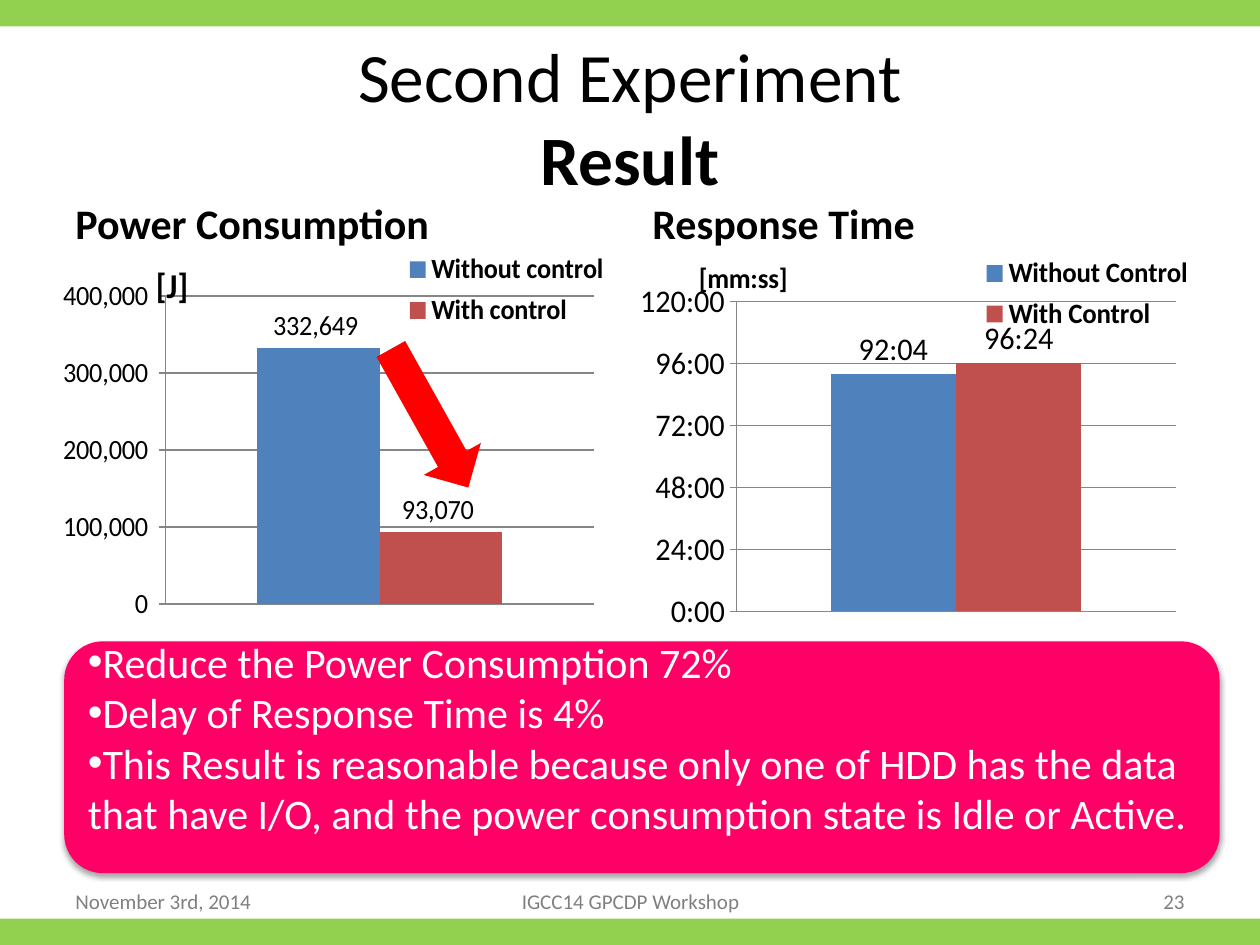
"""Builds the result slide of the second experiment."""
from lxml import etree
from pptx import Presentation
from pptx.chart.data import CategoryChartData
from pptx.dml.color import RGBColor
from pptx.enum.chart import XL_CHART_TYPE, XL_LABEL_POSITION, XL_LEGEND_POSITION, XL_TICK_MARK
from pptx.enum.shapes import MSO_SHAPE
from pptx.enum.text import MSO_ANCHOR, PP_ALIGN
from pptx.oxml import parse_xml
from pptx.oxml.ns import nsdecls, qn
from pptx.util import Inches, Pt

COLUMN = XL_CHART_TYPE.COLUMN_CLUSTERED
ABOVE = XL_LABEL_POSITION.OUTSIDE_END
SIDE = XL_LEGEND_POSITION.RIGHT
CROSS = XL_TICK_MARK.CROSS
RECT, ROUND, ARROW = MSO_SHAPE.RECTANGLE, MSO_SHAPE.ROUNDED_RECTANGLE, MSO_SHAPE.DOWN_ARROW
MIDDLE, BOTTOM = MSO_ANCHOR.MIDDLE, MSO_ANCHOR.BOTTOM
LEFT, CENTER, RIGHT = PP_ALIGN.LEFT, PP_ALIGN.CENTER, PP_ALIGN.RIGHT
GREEN, PINK, RED, GRAY, BLACK, WHITE = "92D050", "FF0066", "FF0000", "808080", "000000", "FFFFFF"
GRID, BARS = "868686", ("4F81BD", "C0504D")


def color(code):
    return RGBColor.from_string(code)


def place(parent, spot, inner=False):
    for old in parent.findall(qn("c:layout")):
        parent.remove(old)
    keys = ("x", "y", "w", "h")[:len(spot)]
    parts = '<c:layoutTarget val="inner"/>' if inner else ""
    parts += "".join(f'<c:{key}Mode val="edge"/>' for key in keys[:2])
    parts += "".join(f'<c:{key} val="{val}"/>' for key, val in zip(keys, spot))
    layout = parse_xml(f'<c:layout {nsdecls("c")}><c:manualLayout>{parts}</c:manualLayout></c:layout>')
    if inner:
        parent.insert(0, layout)
    else:
        parent.find(qn("c:overlay")).addprevious(layout)


class Deck:
    """Holds the style and the current slide."""

    def __init__(self, face):
        self.face = face
        self.show = Presentation()
        self.show.slide_width, self.show.slide_height = Inches(10), Inches(7.5)
        self.slide = self.show.slides.add_slide(self.show.slide_layouts[6])

    def font(self, font, size, code=BLACK, bold=False):
        font.name, font.size, font.bold = self.face, Pt(size), bold
        font.color.rgb = color(code)

    def text(self, box, words, size, code=BLACK, bold=False, align=LEFT, anchor=MIDDLE):
        area = self.slide.shapes.add_textbox(*map(Inches, box))
        frame = area.text_frame
        frame.word_wrap, frame.vertical_anchor = True, anchor
        para = frame.paragraphs[0]
        para.text, para.alignment = words, align
        self.font(para.font, size, code, bold)
        return para

    def shape(self, kind, box, code, turn=0):
        item = self.slide.shapes.add_shape(kind, *map(Inches, box))
        item.shadow.inherit = False
        item.fill.solid()
        item.fill.fore_color.rgb = color(code)
        item.line.fill.background()
        item.rotation = turn
        return item

    def panel(self, box, code, lines, size):
        item = self.shape(ROUND, box, code)
        glow = item.element.spPr.find(qn("a:effectLst"))
        glow.append(parse_xml(
            f'<a:outerShdw {nsdecls("a")} blurRad="{Pt(3.1)}" dist="{Pt(1.8)}" dir="5400000" '
            'rotWithShape="0"><a:srgbClr val="000000"><a:alpha val="35000"/></a:srgbClr></a:outerShdw>'))
        frame = item.text_frame
        frame.word_wrap, frame.vertical_anchor = True, MIDDLE
        frame.margin_bottom = Inches(0.37)
        for num, line in enumerate(lines):
            para = frame.add_paragraph() if num else frame.paragraphs[0]
            para.text, para.alignment = line, LEFT
            props = para._p.get_or_add_pPr()
            etree.SubElement(props, qn("a:buFont")).set("typeface", "Arial")
            etree.SubElement(props, qn("a:buChar")).set("char", "•")
            self.font(para.font, size, WHITE)

    def chart(self, box, bars, top, step, form, size, unit, big, plot, key, mark):
        data = CategoryChartData(number_format=form)
        data.categories = ["1"]
        for name, val in bars:
            data.add_series(name, [val])
        chart = self.slide.shapes.add_chart(COLUMN, *map(Inches, box), data).chart
        self.font(chart.font, 10)
        chart.has_title = False
        chart.category_axis.visible = False

        axis = chart.value_axis
        axis.minimum_scale, axis.maximum_scale, axis.major_unit = 0, top, step
        axis.major_tick_mark = CROSS
        axis.tick_labels.number_format = form
        axis.tick_labels.number_format_is_linked = False
        self.font(axis.tick_labels.font, size)
        for line in (axis.format.line, axis.major_gridlines.format.line):
            line.color.rgb, line.width = color(GRID), Pt(0.75)

        title = axis.axis_title
        para = title.text_frame.paragraphs[0]
        para.text = unit
        self.font(para.font, big, bold=True)
        body = title.text_frame._txBody.bodyPr
        body.set("rot", "0")
        body.set("vert", "horz")
        place(title._element, mark)

        chart.has_legend = True
        chart.legend.position, chart.legend.include_in_layout = SIDE, False
        self.font(chart.legend.font, 16, bold=True)
        place(chart.legend._element, key)
        place(chart._chartSpace.chart.plotArea, plot, True)

        group = chart.plots[0]
        group.vary_by_categories = False
        group.gap_width, group.overlap = 150, 0
        for item, code in zip(group.series, BARS):
            item.format.fill.solid()
            item.format.fill.fore_color.rgb = color(code)
            tags = item.data_labels
            tags.show_value, tags.position = True, ABOVE
            tags.number_format, tags.number_format_is_linked = form, False
            self.font(tags.font, size)


def main():
    deck = Deck("Calibri")
    for top in (0, 7.29):
        deck.shape(RECT, (0, top, 10, 0.21), GREEN)

    head = deck.text((0.5, 0.3, 9, 1.25), "Second Experiment", 39.6, align=CENTER)
    head.add_line_break()
    last = head.add_run()
    last.text, last.font.bold = "Result", True
    for left, words in ((0.5, "Power Consumption"), (5.08, "Response Time")):
        deck.text((left, 1.32, 4.42, 0.7), words, 24, bold=True, anchor=BOTTOM)

    foot = ((0.5, 2.33, "November 3rd, 2014", LEFT),
            (3.42, 3.17, "IGCC14 GPCDP Workshop", CENTER),
            (7.17, 2.33, "23", RIGHT))
    for left, width, words, align in foot:
        deck.text((left, 6.95, width, 0.4), words, 12, GRAY, align=align)

    deck.chart((5.08, 1.86, 4.42, 3.15),
               (("Without Control", 3.8363), ("With Control", 4.0169)),
               5, 1, "[h]:mm", 18, "[mm:ss]", 16,
               plot=(0.14, 0.17, 0.82, 0.78), key=(0.59, 0.04, 0.41, 0.22), mark=(0.06, 0.05))
    deck.chart((0.5, 1.86, 4.42, 3.07),
               (("Without control", 332649), ("With control", 93070)),
               400000, 100000, r"#,##0_);\(#,##0\)", 16, "[J]", 20,
               plot=(0.13, 0.16, 0.82, 0.8), key=(0.62, 0.03, 0.38, 0.23), mark=(0.1, 0.05))

    deck.panel((0.51, 5.09, 9.17, 1.84), PINK, (
        "Reduce the Power Consumption 72%",
        "Delay of Response Time is 4%",
        "This Result is reasonable because only one of HDD has the data that have I/O, "
        "and the power consumption state is Idle or Active."), 24)
    deck.shape(ARROW, (3.15, 2.69, 0.52, 1.26), RED, 330.8)
    deck.show.save("out.pptx")


if __name__ == "__main__":
    main()
